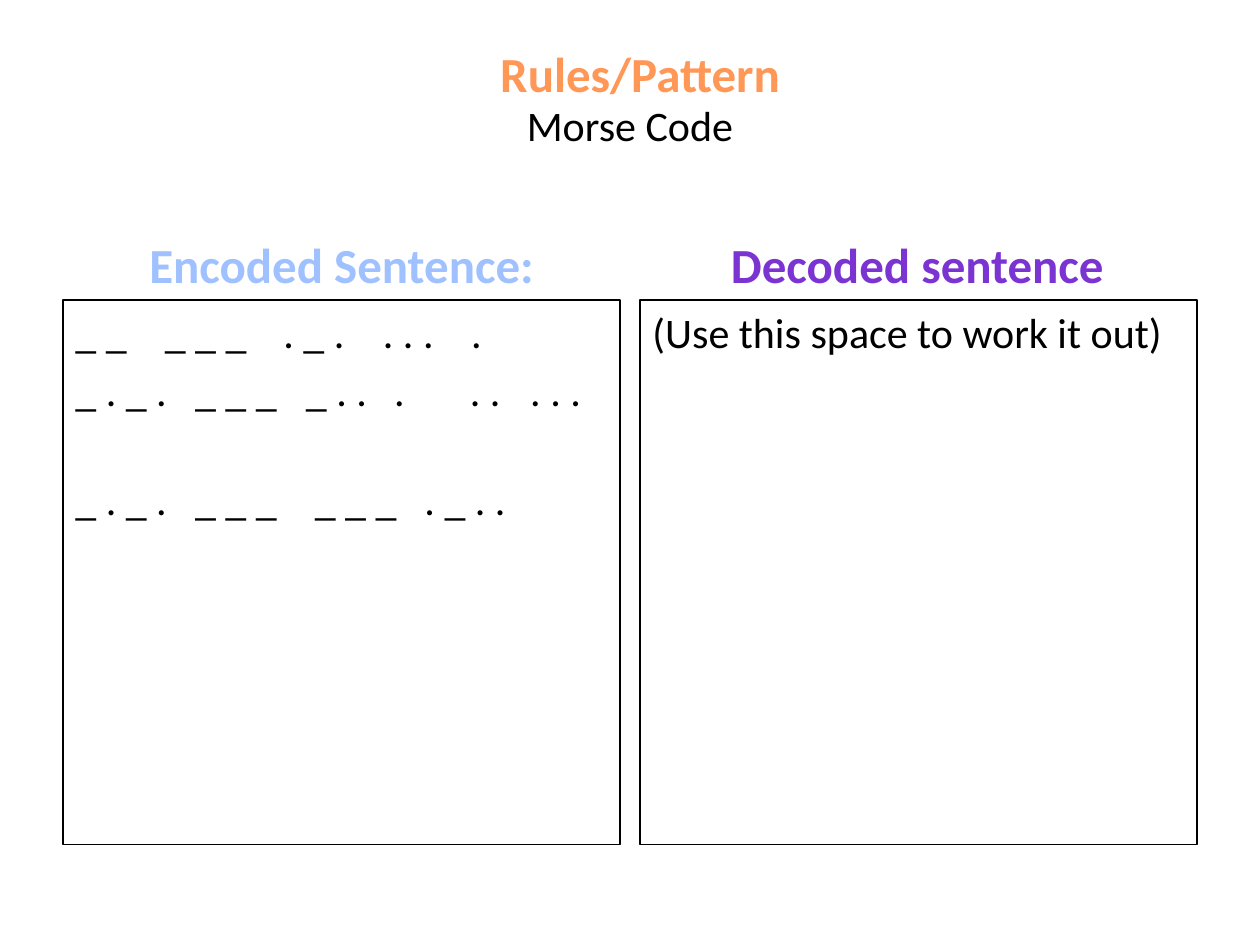
import pptx
import pptx.util
import pptx.dml.color
import pptx.enum.shapes
import pptx.enum.text
from lxml import etree

Inches, Pt = pptx.util.Inches, pptx.util.Pt
RGB = pptx.dml.color.RGBColor.from_string
ALIGN, ANCHOR = pptx.enum.text.PP_ALIGN, pptx.enum.text.MSO_ANCHOR

THEME = {
    "font": "Calibri", "body": Pt(24), "heading": Pt(28),
    "black": "000000", "orange": "FF9856", "blue": "A0C1FF", "purple": "7B34D2",
}


def add_run(p, text, size, color, bold=False):
    r = p.add_run()
    r.text = text
    for name, value in {"name": THEME["font"], "size": size, "bold": bold}.items():
        setattr(r.font, name, value)
    r.font.color.rgb = RGB(color)


def set_tabs(p, stops):
    pPr = p._p.get_or_add_pPr()
    ns = "{%s}" % pPr.nsmap["a"]
    tabs = etree.SubElement(pPr, ns + "tabLst")
    for stop in stops:
        etree.SubElement(tabs, ns + "tab", pos=str(Inches(stop)), algn="l")


prs = pptx.Presentation()
prs.slide_width, prs.slide_height = Inches(10), Inches(7.5)
s = prs.slides.add_slide(prs.slide_layouts[5])

# Title
title = s.shapes.title
for name, value in {"left": 0.5, "top": 0.3, "width": 9, "height": 1.38}.items():
    setattr(title, name, Inches(value))
tf = title.text_frame
tf.vertical_anchor = ANCHOR.MIDDLE
p = tf.paragraphs[0]
p.alignment = ALIGN.CENTER
add_run(p, "Morse Code", THEME["body"], THEME["black"])

# Two work boxes: each line has its letters, tab stops and space before
morse = [
    (["_ _", "_ _ _", ". _ .", ". . .", "."], [0.71, 1.65, 2.44, 3.14], 4.8),
    (["_ . _ .", "_ _ _", "_ . .", ".", ". .", ". . ."],
     [0.95, 1.83, 2.53, 3.13, 3.61], 4.8),
    (["_ . _ .", "_ _ _", "_ _ _", ". _ . ."], [0.95, 1.9, 2.77], 33),
]
work = [(["(Use this space to work it out)"], [], 4.8)]
for left, lines in [(0.5, morse), (5.08, work)]:
    sp = s.shapes.add_shape(pptx.enum.shapes.MSO_SHAPE.RECTANGLE,
                            Inches(left), Inches(2.38), Inches(4.42), Inches(4.32))
    sp.shadow.inherit = False
    sp.fill.background()
    sp.line.color.rgb = RGB(THEME["black"])
    sp.line.width = Pt(0.75)
    tf = sp.text_frame
    tf.word_wrap = True
    tf.vertical_anchor = ANCHOR.TOP
    for i, (letters, stops, before) in enumerate(lines):
        p = tf.add_paragraph() if i else tf.paragraphs[0]
        p.alignment = ALIGN.LEFT
        p.space_before = Pt(before)
        if stops:
            set_tabs(p, stops)
        add_run(p, "\t".join(letters), THEME["body"], THEME["black"])

# Coloured headings
headings = [
    ("Encoded Sentence:", 1.06, 1.81, 3.3, "blue"),
    ("Rules/Pattern", 3.85, 0.3, 2.46, "orange"),
    ("Decoded sentence", 5.68, 1.81, 3.2, "purple"),
]
for text, left, top, width, color in headings:
    sp = s.shapes.add_textbox(Inches(left), Inches(top), Inches(width), Inches(0.57))
    tf = sp.text_frame
    tf.word_wrap = False
    p = tf.paragraphs[0]
    p.alignment = ALIGN.CENTER
    add_run(p, text, THEME["heading"], THEME[color], bold=True)

prs.save("out.pptx")
